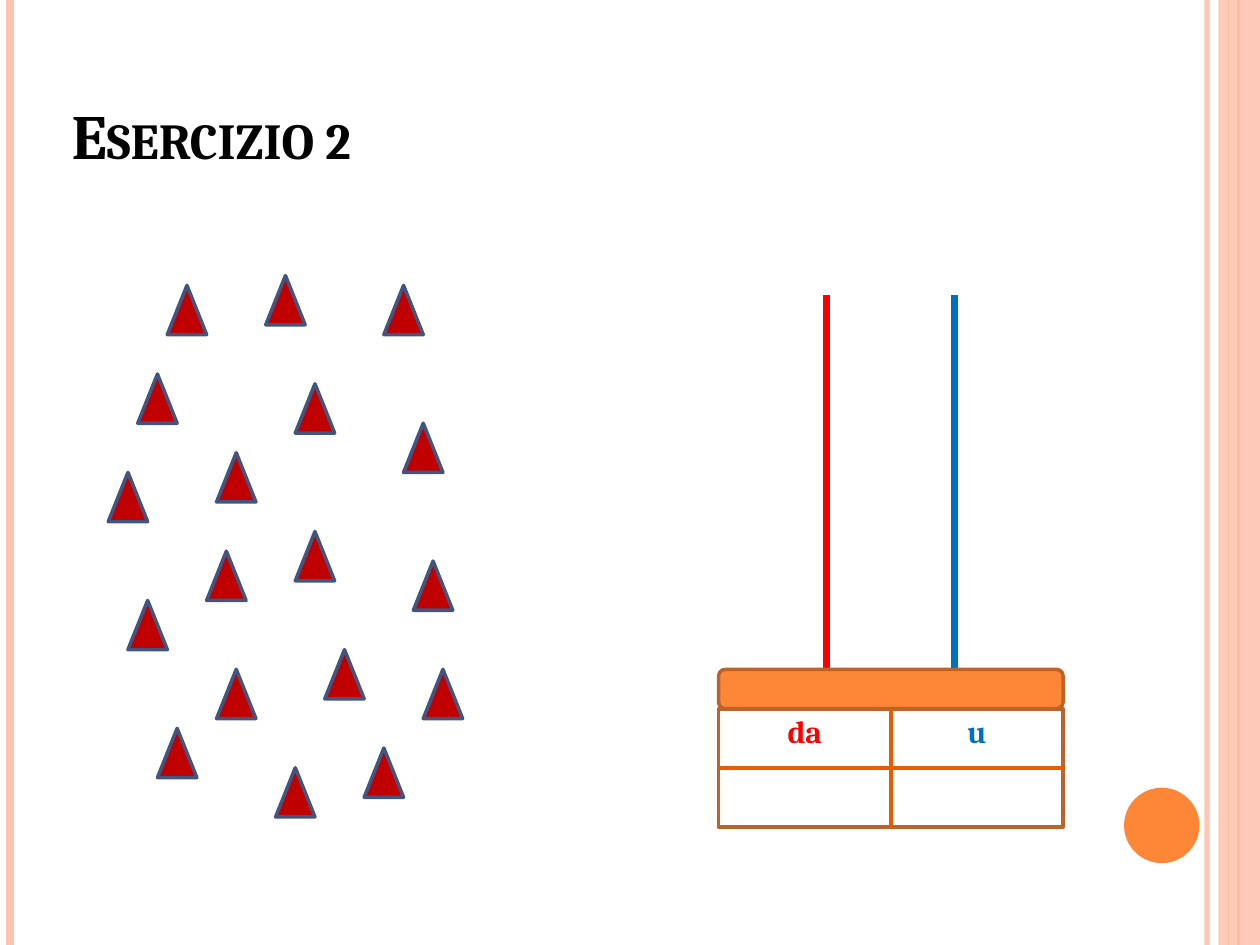
from lxml import etree
from pptx import Presentation, util as u
from pptx.dml.color import RGBColor
from pptx.enum import shapes as kinds, text
from pptx.oxml.ns import qn

# Content
TITLE = "Esercizio 2"
FONT = "Cambria"
COLORS = {
    "peach": "FEC3AE", "orange": "FE8637", "brown": "BC6329", "rust": "E75C01",
    "red": "FF0000", "blue": "0070C0", "dark red": "C00000", "slate": "42557F",
    "white": "FFFFFF", "black": "000000",
}
# Abacus columns: label, colour, rod position in grid units
COLUMNS = [("da", "red", 84), ("u", "blue", 97)]
# Triangles to count: left, top in grid units
TRIANGLES = [
    (17, 29), (14, 38), (27, 28), (30, 39), (39, 29), (22, 46),
    (11, 48), (41, 43), (42, 57), (30, 54), (21, 56), (13, 61),
    (33, 66), (22, 68), (43, 68), (37, 76), (28, 78), (16, 74),
]
# Margin stripes: x in cm, colour, width in points, opacity in percent
STRIPES = [
    (24.33, "peach", 3, 93), (0.2, "peach", 4.5, 100),
    (24.97, "orange", 1.5, 100), (24.77, "orange", 0.75, 100),
]

WIDTH, HEIGHT = u.Cm(25.4), u.Cm(19.05)
UNIT = WIDTH / 128  # drawing grid
BOARD_LEFT, BOARD_WIDTH = 73, 35
BASE_TOP, BASE_HEIGHT = 68, 4
GRID_TOP, GRID_HEIGHT = BASE_TOP + BASE_HEIGHT, 12
ROD_TOP = 30


def grid(*units):
    return [round(n * UNIT) for n in units]


def rgb(name):
    return RGBColor.from_string(COLORS[name])


def set_opacity(fill_holder, percent):
    color = next(fill_holder.iter(qn("a:srgbClr")))
    etree.SubElement(color, qn("a:alpha"), val=str(percent * 1000))


def add_figure(parent, kind, box, fill=None, line=None):
    figure = parent.add_shape(kind, *box)
    figure.shadow.inherit = False
    if fill:
        figure.fill.solid()
        figure.fill.fore_color.rgb = rgb(fill)
    else:
        figure.fill.background()
    if line:
        figure.line.color.rgb = rgb(line)
        figure.line.width = u.Pt(2)
    else:
        figure.line.fill.background()
    return figure


def add_line(parent, ends, color, width, opacity=100):
    line = parent.add_connector(kinds.MSO_CONNECTOR.STRAIGHT, *ends)
    line.line.color.rgb = rgb(color)
    line.line.width = u.Pt(width)
    properties = line._element.spPr
    if opacity < 100:
        set_opacity(properties, opacity)
    etree.SubElement(properties, qn("a:effectLst"))


def add_run(paragraph, words, size, color):
    run = paragraph.add_run()
    run.text = words
    run.font.name, run.font.size, run.font.bold = FONT, u.Pt(size), True
    run.font.color.rgb = rgb(color)
    return run


def set_borders(cell, color):
    properties = cell._tc.get_or_add_tcPr()
    for position, side in enumerate(("lnL", "lnR", "lnT", "lnB")):
        border = etree.Element(qn(f"a:{side}"), w=str(u.Pt(1)))
        solid = etree.SubElement(border, qn("a:solidFill"))
        etree.SubElement(solid, qn("a:srgbClr"), val=COLORS[color])
        properties.insert(position, border)


def add_margins(slide):
    for x, color, width, opacity in STRIPES:
        add_line(slide.shapes, (u.Cm(x), 0, u.Cm(x), HEIGHT), color, width, opacity)
    band_left = u.Cm(24.56)
    band = add_figure(slide.shapes, kinds.MSO_SHAPE.RECTANGLE,
                      (band_left, 0, WIDTH - band_left, HEIGHT), "peach")
    set_opacity(band._element.spPr, 87)
    add_figure(slide.shapes, kinds.MSO_SHAPE.OVAL,
               (u.Cm(22.66), u.Cm(15.88), u.Cm(1.52), u.Cm(1.52)), "orange")


def add_title(slide):
    title = slide.shapes.title
    title.left, title.top = u.Cm(1.19), u.Cm(0.41)
    title.width, title.height = u.Cm(20.75), u.Cm(3.18)
    title.text_frame.vertical_anchor = text.MSO_ANCHOR.BOTTOM
    paragraph = title.text_frame.paragraphs[0]
    paragraph.alignment = text.PP_ALIGN.LEFT
    heading = add_run(paragraph, TITLE, 36, "black")
    heading.font._element.set("cap", "small")


def add_abacus(slide):
    # Rods and base
    for _, color, x in COLUMNS:
        add_line(slide.shapes, grid(x, ROD_TOP, x, BASE_TOP), color, 4)
    add_figure(slide.shapes, kinds.MSO_SHAPE.ROUNDED_RECTANGLE,
               grid(BOARD_LEFT, BASE_TOP, BOARD_WIDTH, BASE_HEIGHT), "orange", "brown")

    # Place-value table
    box = grid(BOARD_LEFT, GRID_TOP, BOARD_WIDTH, GRID_HEIGHT)
    table = slide.shapes.add_table(2, len(COLUMNS), *box).table
    for cell in table.iter_cells():
        cell.fill.solid()
        cell.fill.fore_color.rgb = rgb("white")
        set_borders(cell, "white")
    for cell, (label, color, _) in zip(table.rows[0].cells, COLUMNS):
        paragraph = cell.text_frame.paragraphs[0]
        paragraph.alignment = text.PP_ALIGN.CENTER
        add_run(paragraph, label, 18, color)

    # Frame and dividers
    add_figure(slide.shapes, kinds.MSO_SHAPE.RECTANGLE, box, line="brown")
    right, bottom = BOARD_LEFT + BOARD_WIDTH, GRID_TOP + GRID_HEIGHT
    middle_x, middle_y = BOARD_LEFT + BOARD_WIDTH / 2, GRID_TOP + GRID_HEIGHT / 2
    for ends in ((middle_x, GRID_TOP, middle_x, bottom),
                 (BOARD_LEFT, middle_y, right, middle_y)):
        add_line(slide.shapes, grid(*ends), "rust", 2)


def main():
    prs = Presentation()
    prs.slide_width, prs.slide_height = WIDTH, HEIGHT
    slide = prs.slides.add_slide(prs.slide_layouts[5])
    add_margins(slide)
    add_title(slide)
    triangles = slide.shapes.add_group_shape()
    for left, top in TRIANGLES:
        add_figure(triangles.shapes, kinds.MSO_SHAPE.ISOSCELES_TRIANGLE,
                   grid(left, top, 4, 5), "dark red", "slate")
    add_abacus(slide)
    prs.save("out.pptx")


if __name__ == "__main__":
    main()
